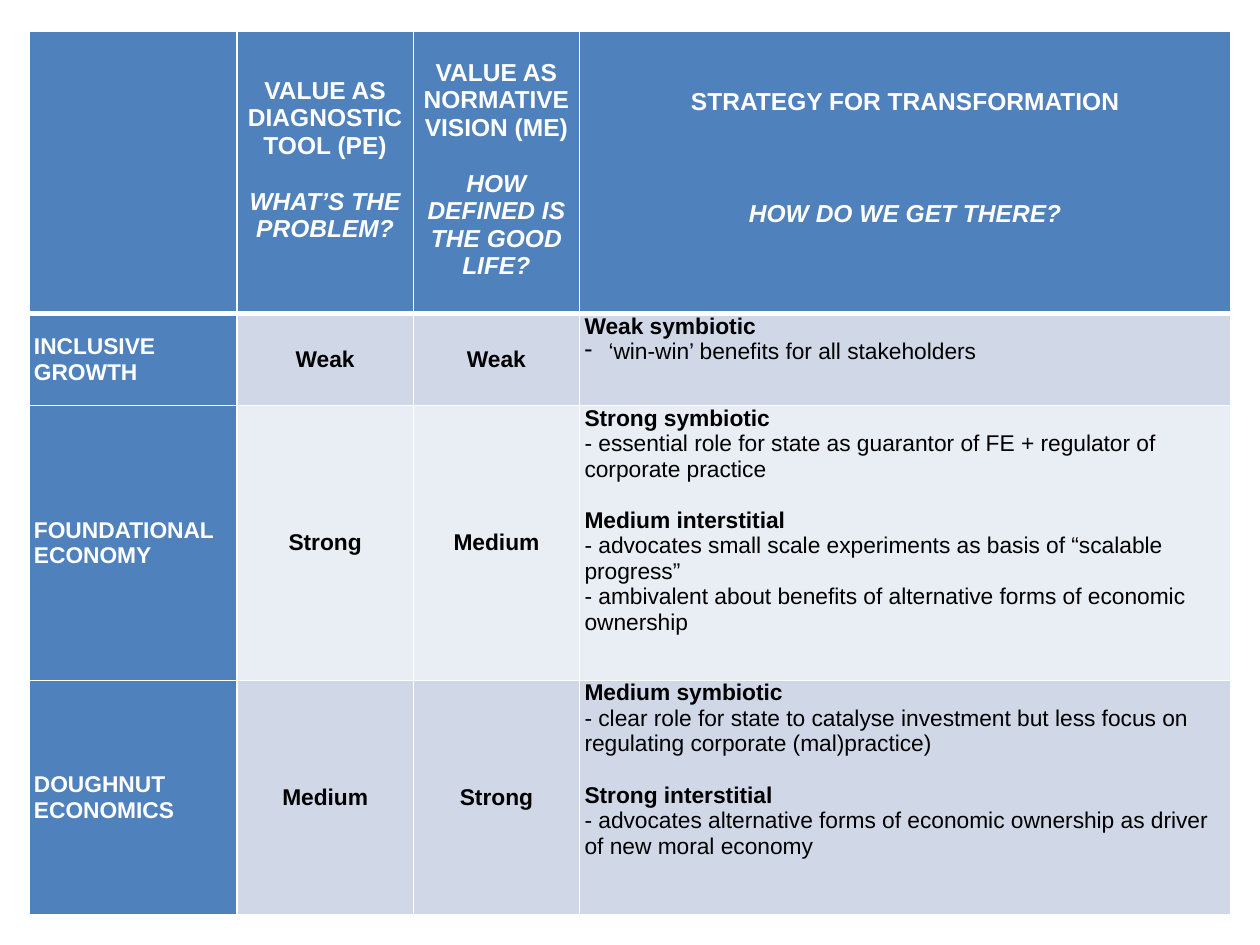
from dataclasses import dataclass

from lxml.etree import SubElement
from pptx import Presentation
from pptx.dml.color import RGBColor
from pptx.enum.text import MSO_ANCHOR, PP_ALIGN
from pptx.oxml.ns import qn
from pptx.util import Inches, Pt


@dataclass(frozen=True)
class Theme:
    font: str = "Arial"
    header_size: float = 14
    body_size: float = 13
    line_height: float = 1.15
    accent: str = "4F81BD"
    bands: tuple = ("D0D8E8", "E9EDF4")
    light: str = "FFFFFF"
    dark: str = "000000"
    rule: float = 1
    header_rule: float = 3


THEME = Theme()
COLUMN_WIDTHS = (1.65, 1.4, 1.32, 5.17)
ROW_HEIGHTS = (2.24, 0.73, 2.18, 1.86)

# Each heading: title, question, anchor, top margin, bottom margin, lines between
HEADINGS = (
    ("VALUE AS DIAGNOSTIC TOOL (PE)", "WHAT’S THE PROBLEM?", MSO_ANCHOR.MIDDLE, 0, 0.2, 1),
    ("VALUE AS NORMATIVE VISION (ME)", "HOW DEFINED IS THE GOOD LIFE?", MSO_ANCHOR.TOP, 0.22, 0, 1),
    ("STRATEGY FOR TRANSFORMATION", "HOW DO WE GET THERE?", MSO_ANCHOR.TOP, 0.45, 0, 3),
)

# Each approach: name, diagnostic rating, vision rating, strategies with their points
APPROACHES = (
    ("INCLUSIVE GROWTH", "Weak", "Weak", (
        ("Weak symbiotic", ("‘win-win’ benefits for all stakeholders",)),
    )),
    ("FOUNDATIONAL ECONOMY", "Strong", "Medium", (
        ("Strong symbiotic", (
            "- essential role for state as guarantor of FE + regulator of corporate practice",)),
        ("Medium interstitial", (
            "- advocates small scale experiments as basis of “scalable progress”",
            "- ambivalent about benefits of alternative forms of economic ownership")),
    )),
    ("DOUGHNUT ECONOMICS", "Medium", "Strong", (
        ("Medium symbiotic", (
            "- clear role for state to catalyse investment but less focus on "
            "regulating corporate (mal)practice)",)),
        ("Strong interstitial", (
            "- advocates alternative forms of economic ownership as driver of new moral economy",)),
    )),
)


def add_border(cell, side, width):
    properties = cell._tc.get_or_add_tcPr()
    line = SubElement(properties, qn(f"a:ln{side}"), w=str(Pt(width)))
    fill = SubElement(line, qn("a:solidFill"))
    SubElement(fill, qn("a:srgbClr"), val=THEME.light)


def style_cell(cell, color, anchor, top_rule, bottom_rule, top=0, bottom=0):
    for side, width in zip("LRTB", (THEME.rule, THEME.rule, top_rule, bottom_rule)):
        add_border(cell, side, width)
    cell.fill.solid()
    cell.fill.fore_color.rgb = RGBColor.from_string(color)
    cell.vertical_anchor = anchor
    cell.margin_left = cell.margin_right = Inches(0.04)
    cell.margin_top, cell.margin_bottom = Inches(top), Inches(bottom)


def write_paragraph(cell, text, size, color, bold=True, italic=False,
                    align=PP_ALIGN.LEFT, gap_lines=0, dash=False):
    """Fill the empty first paragraph of the cell, or add one below the others."""
    frame = cell.text_frame
    paragraph = frame.add_paragraph() if frame.text else frame.paragraphs[0]
    paragraph.text = text
    paragraph.alignment = align
    if gap_lines:
        paragraph.space_before = Pt(round(gap_lines * size * THEME.line_height, 1))
    if dash:
        properties = paragraph._p.get_or_add_pPr()
        properties.set("marL", str(Inches(0.19)))
        properties.set("indent", str(-Inches(0.19)))
        SubElement(properties, qn("a:buChar"), char="-")
    font = paragraph.font
    font.name, font.size = THEME.font, Pt(size)
    font.bold, font.italic = bold, italic
    font.color.rgb = RGBColor.from_string(color)


def fill_header(table):
    rules = (THEME.rule, THEME.header_rule)
    style_cell(table.cell(0, 0), THEME.accent, MSO_ANCHOR.TOP, *rules)
    for column, (title, question, anchor, top, bottom, gap) in enumerate(HEADINGS, 1):
        cell = table.cell(0, column)
        style_cell(cell, THEME.accent, anchor, *rules, top, bottom)
        write_paragraph(cell, title, THEME.header_size, THEME.light, align=PP_ALIGN.CENTER)
        write_paragraph(cell, question, THEME.header_size, THEME.light, italic=True,
                        align=PP_ALIGN.CENTER, gap_lines=gap)


def write_strategies(cell, strategies):
    for index, (title, points) in enumerate(strategies):
        write_paragraph(cell, title, THEME.body_size, THEME.dark, gap_lines=min(index, 1))
        for point in points:
            write_paragraph(cell, point, THEME.body_size, THEME.dark, bold=False,
                            dash=not point.startswith("-"))


def fill_approach(table, row, approach):
    name, diagnostic, vision, strategies = approach
    band = THEME.bands[(row - 1) % 2]
    rules = (THEME.header_rule if row == 1 else THEME.rule, THEME.rule)
    name_cell, *rating_cells, strategy_cell = table.rows[row].cells

    style_cell(name_cell, THEME.accent, MSO_ANCHOR.MIDDLE, *rules)
    write_paragraph(name_cell, name, THEME.body_size, THEME.light)
    for cell, rating in zip(rating_cells, (diagnostic, vision)):
        style_cell(cell, band, MSO_ANCHOR.MIDDLE, *rules)
        write_paragraph(cell, rating, THEME.body_size, THEME.dark, align=PP_ALIGN.CENTER)
    style_cell(strategy_cell, band, MSO_ANCHOR.TOP, *rules)
    write_strategies(strategy_cell, strategies)


def add_comparison_table(slide, left, top, width, height):
    table = slide.shapes.add_table(len(ROW_HEIGHTS), len(COLUMN_WIDTHS),
                                   left, top, width, height).table
    for column, column_width in zip(table.columns, COLUMN_WIDTHS):
        column.width = Inches(column_width)
    for row, row_height in zip(table.rows, ROW_HEIGHTS):
        row.height = Inches(row_height)
    fill_header(table)
    for row, approach in enumerate(APPROACHES, 1):
        fill_approach(table, row, approach)


def main():
    presentation = Presentation()
    presentation.slide_width, presentation.slide_height = Inches(10), Inches(7.5)
    slide = presentation.slides.add_slide(presentation.slide_layouts[6])
    add_comparison_table(slide, Inches(0.23), Inches(0.25), Inches(9.55), Inches(7))
    presentation.save("out.pptx")


if __name__ == "__main__":
    main()
